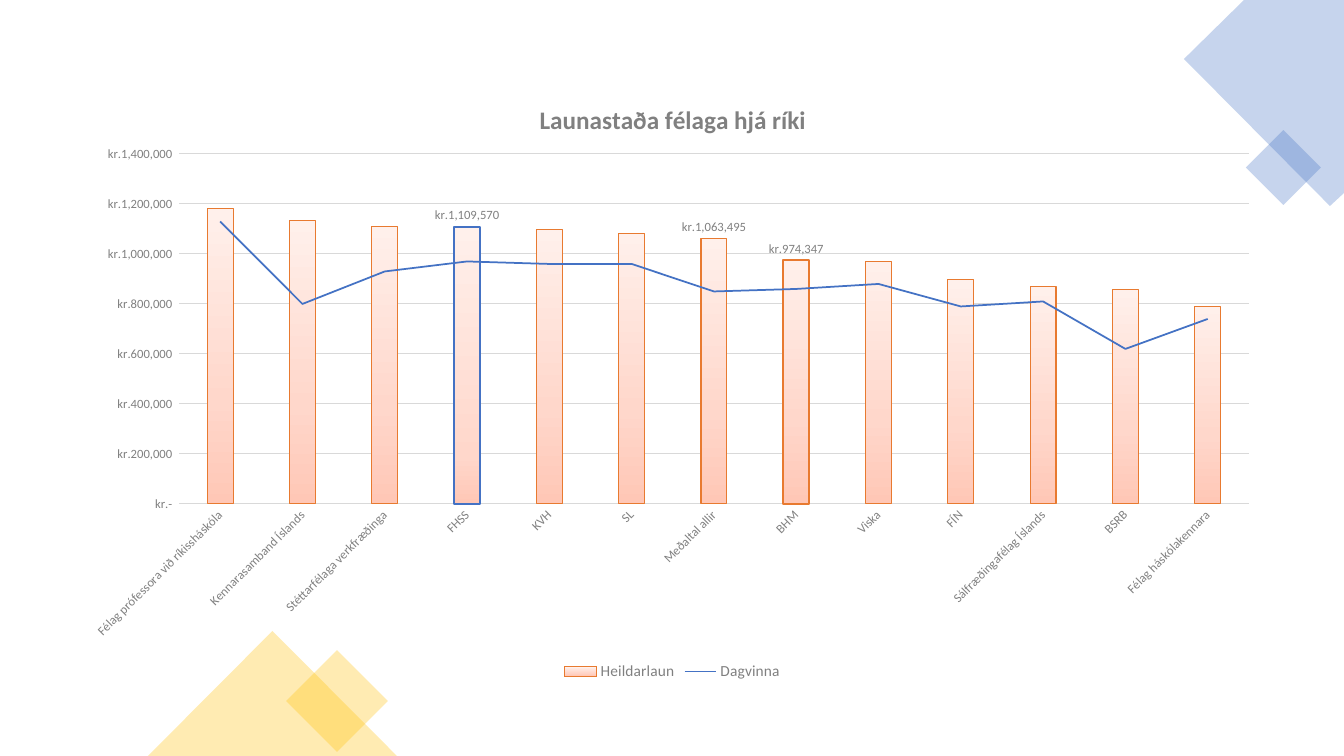
from copy import deepcopy

from lxml import etree
from pptx import Presentation
from pptx.chart.data import CategoryChartData
from pptx.dml.color import RGBColor
from pptx.enum.chart import (XL_CHART_TYPE, XL_LABEL_POSITION, XL_LEGEND_POSITION,
                             XL_MARKER_STYLE, XL_TICK_MARK)
from pptx.enum.shapes import MSO_SHAPE
from pptx.oxml.ns import qn
from pptx.util import Pt

COLUMN = XL_CHART_TYPE.COLUMN_CLUSTERED
ABOVE = XL_LABEL_POSITION.OUTSIDE_END
BOTTOM = XL_LEGEND_POSITION.BOTTOM
NO_MARK = XL_MARKER_STYLE.NONE
NO_TICK = XL_TICK_MARK.NONE
RECT, PEAK = MSO_SHAPE.RECTANGLE, MSO_SHAPE.ISOSCELES_TRIANGLE

# Content
TITLE = "Launastaða félaga hjá ríki"
BARS, LINE = "Heildarlaun", "Dagvinna"
ROWS = [
    ("Félag prófessora við ríkissháskóla", 1181883, 1130000),
    ("Kennarasamband Íslands", 1133680, 800000),
    ("Stéttarfélaga verkfræðinga", 1110465, 930000),
    ("FHSS", 1109570, 970000),
    ("KVH", 1096263, 960000),
    ("SL", 1082496, 960000),
    ("Meðaltal allir", 1063495, 850000),
    ("BHM", 974347, 860000),
    ("Viska", 968186, 880000),
    ("FÍN", 898050, 790000),
    ("Sálfræðingafélag Íslands", 868867, 810000),
    ("BSRB", 859242, 620000),
    ("Félag háskólakennara", 791253, 740000),
]
MONEY = r'_("kr."* #,##0_);_("kr."* \(#,##0\);_("kr."* "-"_);_(@_)'
BLUE, GOLD, ORANGE, GREY, PALE = "4472C4", "FFC000", "E87A30", "808080", "D9D9D9"
FADE = [(0, "FFC7B6"), (0.35, "FFD7CB"), (1, "FFF0EB")]
FADE_FHSS = [(0, "FFC7B6"), (0.17, "FFD7CB"), (1, "FFF0EB")]
MARKED = {3: (FADE_FHSS, BLUE), 7: (FADE, ORANGE)}
LABELED = [3, 6, 7]

# Places in px
PX = 914400 / 100.8
SLIDE = (1344, 756)
CHART = (71, 71, 1203, 614)
PLOT = (179, 154, 1070, 350)
HEAD = (535, 98)
CORNER = [(1344, 0), (1244, 0), (1184, 59), (1330, 206), (1344, 193)]
DECOR = [
    (RECT, (1257, 141, 53, 53), 315, BLUE),
    (RECT, (301, 665, 72, 72), 45, GOLD),
    (PEAK, (148, 631, 249, 125), 0, GOLD),
]


def emu(*px):
    return [round(n * PX) for n in px]


def rgb(color):
    return RGBColor.from_string(color)


def tint(shape, color):
    shape.shadow.inherit = False
    shape.fill.solid()
    shape.fill.fore_color.rgb = rgb(color)
    tone = shape._element.spPr.find(".//" + qn("a:srgbClr"))
    etree.SubElement(tone, qn("a:alpha"), val="30000")
    shape.line.fill.background()


def style(font, size, bold=False):
    look = {"name": "Calibri", "size": Pt(size), "bold": bold}
    for key, value in look.items():
        setattr(font, key, value)
    font.color.rgb = rgb(GREY)


def stroke(line, color, width):
    line.color.rgb = rgb(color)
    line.width = Pt(width)


def fade(form, stops):
    form.fill.gradient()
    form.fill.gradient_angle = 90
    group = form._element.find(qn("c:spPr")).find(".//" + qn("a:gsLst"))
    group.insert(1, deepcopy(group[0]))
    for stop, (spot, color) in zip(form.fill.gradient_stops, stops):
        stop.position = spot
        stop.color.rgb = rgb(color)


def place(node, index, box, inner=False):
    """Fix a chart part at a box given in slide px."""
    for old in node.findall(qn("c:layout")):
        node.remove(old)
    frame = node.makeelement(qn("c:layout"))
    node.insert(index, frame)
    hand = etree.SubElement(frame, qn("c:manualLayout"))
    left, top, wide, high = CHART
    parts = [("layoutTarget", "inner")] if inner else []
    parts += [("xMode", "edge"), ("yMode", "edge")]
    base = [left, top, 0, 0]
    for key, n, zero, span in zip("xywh", box, base, [wide, high] * 2):
        parts.append((key, f"{(n - zero) / span:.4f}"))
    for key, value in parts:
        etree.SubElement(hand, qn("c:" + key), val=value)


def split(chart):
    """Move the second series from the columns to a line plot."""
    bars = chart._chartSpace.find(".//" + qn("c:barChart"))
    series = bars.findall(qn("c:ser"))[1]
    for flag in series.findall(qn("c:invertIfNegative")):
        series.remove(flag)
    lines = bars.makeelement(qn("c:lineChart"))
    bars.addnext(lines)
    etree.SubElement(lines, qn("c:grouping"), val="standard")
    etree.SubElement(lines, qn("c:varyColors"), val="0")
    lines.append(series)
    etree.SubElement(lines, qn("c:marker"), val="1")
    for axis in bars.findall(qn("c:axId")):
        lines.append(deepcopy(axis))


prs = Presentation()
prs.slide_width, prs.slide_height = emu(*SLIDE)
slide = prs.slides.add_slide(prs.slide_layouts[6])

# Corner shapes
pen = slide.shapes.build_freeform(*CORNER[0], scale=PX)
pen.add_line_segments(CORNER[1:], close=True)
tint(pen.convert_to_shape(), BLUE)
for kind, box, turn, color in DECOR:
    shape = slide.shapes.add_shape(kind, *emu(*box))
    shape.rotation = turn
    tint(shape, color)

# Chart
names, totals, days = zip(*ROWS)
data = CategoryChartData(number_format=MONEY)
data.categories = names
data.add_series(BARS, totals)
data.add_series(LINE, days)
chart = slide.shapes.add_chart(COLUMN, *emu(*CHART), data).chart
split(chart)
style(chart.font, 10)
place(chart._chartSpace.find(".//" + qn("c:plotArea")), 0, PLOT, inner=True)

# Title and legend
chart.has_title = True
title = chart.chart_title
title.text_frame.text = TITLE
style(title.text_frame.paragraphs[0].runs[0].font, 18, True)
place(title._element, 1, HEAD)
chart.has_legend = True
chart.legend.position = BOTTOM
chart.legend.include_in_layout = False
style(chart.legend.font, 11)

# Axes
cat, val = chart.category_axis, chart.value_axis
for axis in (cat, val):
    axis.major_tick_mark = axis.minor_tick_mark = NO_TICK
    style(axis.tick_labels.font, 9)
stroke(cat.format.line, PALE, 0.75)
cat._element.find(".//" + qn("a:bodyPr")).set("rot", "-2700000")
val.minimum_scale, val.maximum_scale, val.major_unit = 0, 1400000, 200000
val.tick_labels.number_format = MONEY
val.tick_labels.number_format_is_linked = False
val.format.line.fill.background()
stroke(val.major_gridlines.format.line, PALE, 0.75)

# Columns
plot, curve = chart.plots
plot.gap_width = 219
plot.vary_by_categories = False
bars = plot.series[0]
fade(bars.format, FADE)
stroke(bars.format.line, ORANGE, 0.75)
for index, (stops, color) in MARKED.items():
    form = bars.points[index].format
    fade(form, stops)
    stroke(form.line, color, 1.5)
bars.data_labels.show_value = False
for index in LABELED:
    label = bars.points[index].data_label
    style(label.font, 9)
    label.position = ABOVE

# Line
days_line = curve.series[0]
stroke(days_line.format.line, BLUE, 1.25)
days_line.marker.style = NO_MARK
days_line.smooth = False

prs.save("out.pptx")
